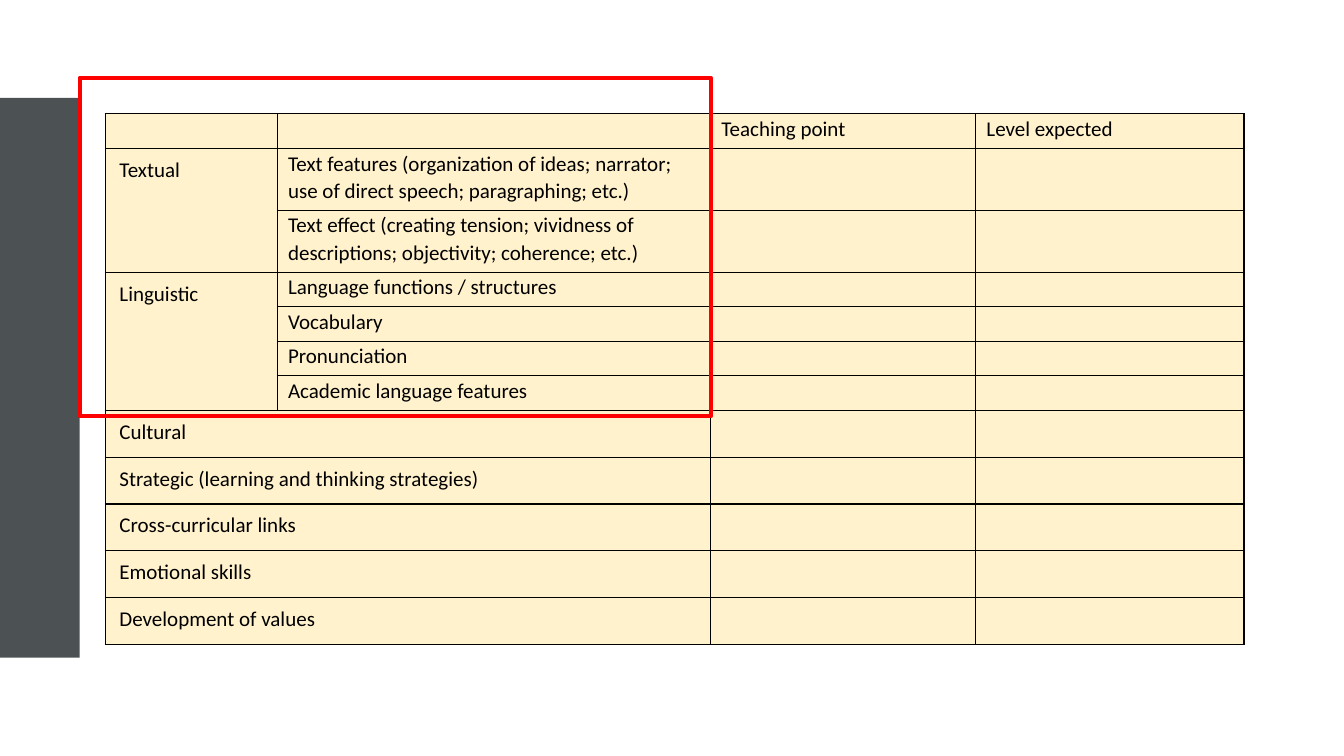
from dataclasses import dataclass

from lxml.etree import SubElement
from pptx import Presentation
from pptx.dml.color import RGBColor as RGB
from pptx.enum.shapes import MSO_SHAPE as SHAPE
from pptx.oxml.ns import qn
from pptx.util import Cm, Pt


@dataclass(frozen=True)
class Theme:
    band: RGB = RGB(0x4C, 0x52, 0x54)
    cell: RGB = RGB(0xFF, 0xF2, 0xCC)
    ink: RGB = RGB(0, 0, 0)
    highlight: RGB = RGB(0xFF, 0, 0)
    font: str = "Calibri"
    size: Pt = Pt(15)
    border: Pt = Pt(1)
    frame: Pt = Pt(3)


THEME = Theme()

COLUMNS = [4.34, 10.92, 6.68, 6.76]
HEADER = ["", "", "Teaching point", "Level expected"]
GROUPS = {
    "Textual": [
        "Text features (organization of ideas; narrator; use of direct speech; paragraphing; etc.)",
        "Text effect (creating tension; vividness of descriptions; objectivity; coherence; etc.)",
    ],
    "Linguistic": [
        "Language functions / structures",
        "Vocabulary",
        "Pronunciation",
        "Academic language features",
    ],
}
WIDE_ROWS = [
    "Cultural",
    "Strategic (learning and thinking strategies)",
    "Cross-curricular links",
    "Emotional skills",
    "Development of values",
]
LINE_ROW, TWO_LINE_ROW, WIDE_ROW = 0.87, 1.56, 1.18
ROW_HEIGHTS = [LINE_ROW] + [TWO_LINE_ROW] * 2 + [LINE_ROW] * 4 + [WIDE_ROW] * 5


def add_border(cell):
    tc_pr = cell._tc.get_or_add_tcPr()
    for side in ("lnL", "lnR", "lnT", "lnB"):
        ln = SubElement(tc_pr, qn(f"a:{side}"), w=str(THEME.border))
        fill = SubElement(ln, qn("a:solidFill"))
        SubElement(fill, qn("a:srgbClr"), val=str(THEME.ink))


def style_cell(cell):
    add_border(cell)
    cell.fill.solid()
    cell.fill.fore_color.rgb = THEME.cell
    cell.margin_left = cell.margin_right = Cm(0.27)
    cell.margin_top, cell.margin_bottom = Cm(0.02), Cm(0)


def write(cell, text):
    if not text:
        return
    p = cell.text_frame.paragraphs[0]
    p.text = text
    p.line_spacing = 1.07
    font = p.runs[0].font
    font.name, font.size, font.color.rgb = THEME.font, THEME.size, THEME.ink


def write_label(cell, text):
    write(cell, text)
    cell.margin_left = cell.margin_right = Cm(0.36)
    cell.margin_top = cell.margin_bottom = Cm(0.18)


def add_rect(s, x, y, w, h):
    sp = s.shapes.add_shape(SHAPE.RECTANGLE, Cm(x), Cm(y), Cm(w), Cm(h))
    sp.shadow.inherit = False
    return sp


def add_band(s, x, y, w, h):
    sp = add_rect(s, x, y, w, h)
    sp.fill.solid()
    sp.fill.fore_color.rgb = THEME.band
    sp.line.fill.background()


def add_frame(s, x, y, w, h):
    sp = add_rect(s, x, y, w, h)
    sp.fill.background()
    sp.line.color.rgb = THEME.highlight
    sp.line.width = THEME.frame


def add_skills_table(s, x, y):
    table = s.shapes.add_table(
        len(ROW_HEIGHTS), len(COLUMNS),
        Cm(x), Cm(y), Cm(sum(COLUMNS)), Cm(sum(ROW_HEIGHTS)),
    ).table
    table.first_row = table.horz_banding = False
    for column, width in zip(table.columns, COLUMNS):
        column.width = Cm(width)
    for row, height in zip(table.rows, ROW_HEIGHTS):
        row.height = Cm(height)
    for cell in table.iter_cells():
        style_cell(cell)

    for col, text in enumerate(HEADER):
        write(table.cell(0, col), text)

    # Grouped skills: label merged down, one detail per row
    row = 1
    for label, details in GROUPS.items():
        table.cell(row, 0).merge(table.cell(row + len(details) - 1, 0))
        write_label(table.cell(row, 0), label)
        for detail in details:
            write(table.cell(row, 1), detail)
            row += 1

    # Single skills: label merged across
    for row, label in enumerate(WIDE_ROWS, row):
        table.cell(row, 0).merge(table.cell(row, 1))
        write_label(table.cell(row, 0), label)


def main():
    prs = Presentation()
    prs.slide_width, prs.slide_height = Cm(33.87), Cm(19.05)
    s = prs.slides.add_slide(prs.slide_layouts[6])
    add_band(s, 0, 2.47, 2.01, 14.1)
    add_skills_table(s, 2.65, 2.87)
    add_frame(s, 2.01, 1.96, 15.9, 8.53)
    prs.save("out.pptx")


if __name__ == "__main__":
    main()
